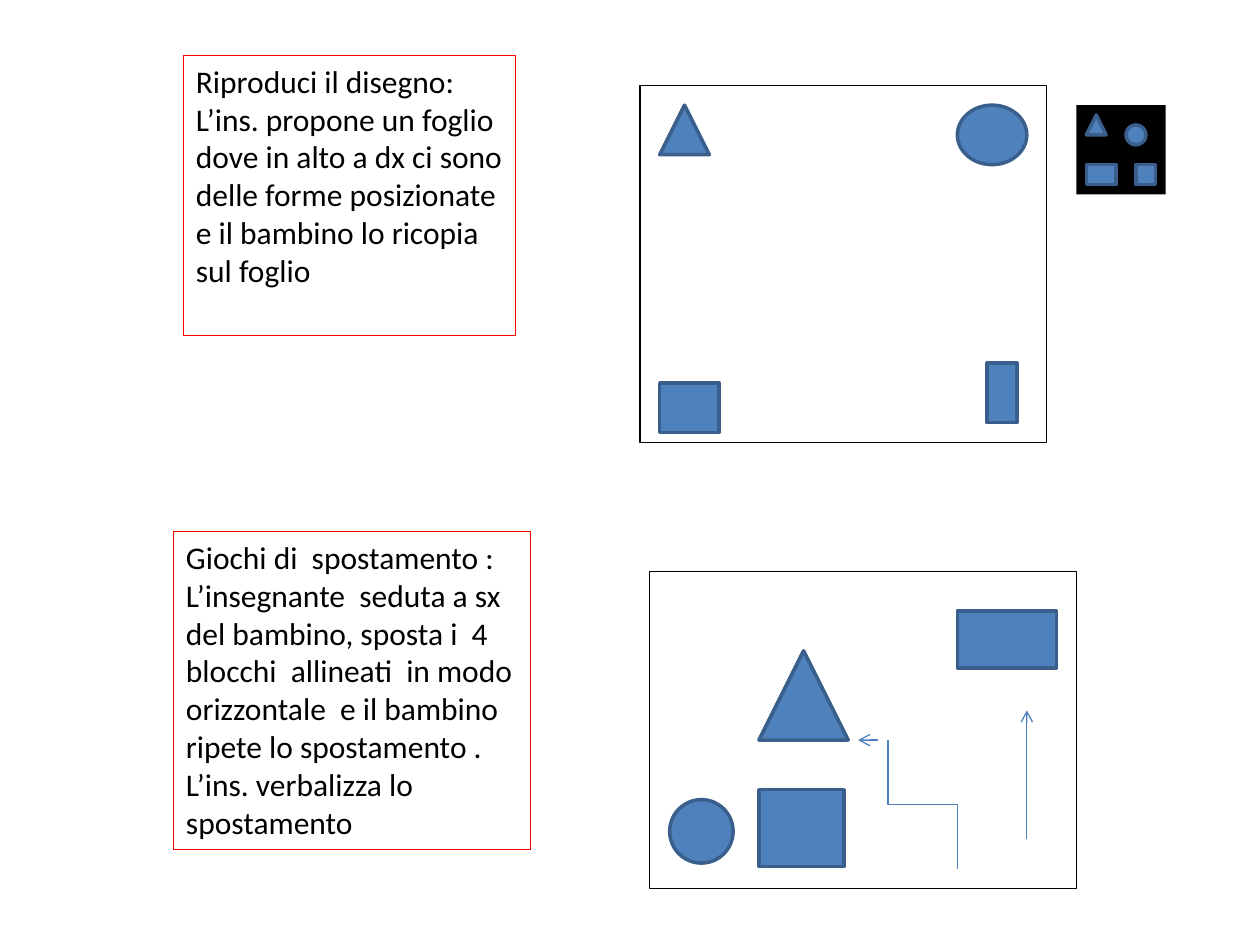
from lxml import etree
from pptx import Presentation
from pptx import util as u
from pptx.dml.color import RGBColor
from pptx.enum import shapes, text
from pptx.oxml import ns

BLUE = RGBColor(0x4F, 0x81, 0xBD)
EDGE = RGBColor(0x3A, 0x5F, 0x8C)
ARROW = RGBColor(0x4B, 0x7E, 0xBC)
RED = RGBColor(0xFF, 0x00, 0x00)
BLACK = RGBColor(0x00, 0x00, 0x00)

KIND = shapes.MSO_SHAPE
RECT, TRIANGLE, CIRCLE = KIND.RECTANGLE, KIND.ISOSCELES_TRIANGLE, KIND.FLOWCHART_CONNECTOR
STRAIGHT, ELBOW = shapes.MSO_CONNECTOR.STRAIGHT, shapes.MSO_CONNECTOR.ELBOW


class Sheet:
    font = {"name": "Calibri", "size": u.Pt(18)}
    frame = {
        "word_wrap": True,
        "auto_size": text.MSO_AUTO_SIZE.NONE,
        "vertical_anchor": text.MSO_ANCHOR.TOP,
    }

    def __init__(self, slide):
        self.slide = slide

    def figure(self, kind, box, fill=BLUE, line=EDGE, width=2):
        shape = self.slide.shapes.add_shape(kind, *map(u.Cm, box))
        shape.shadow.inherit = False
        if fill is None:
            shape.fill.background()
        else:
            shape.fill.solid()
            shape.fill.fore_color.rgb = fill
        if line is None:
            shape.line.fill.background()
        else:
            shape.line.color.rgb = line
            shape.line.width = u.Pt(width)
        return shape

    def outline(self, box, line=BLACK):
        return self.figure(RECT, box, None, line, 0.75)

    def note(self, box, paragraphs):
        frame = self.outline(box, RED).text_frame
        for name, value in self.frame.items():
            setattr(frame, name, value)
        frame.text = "\n".join(paragraphs)
        for paragraph in frame.paragraphs:
            paragraph.alignment = text.PP_ALIGN.LEFT
            for run in paragraph.runs:
                run.font.color.rgb = BLACK
                for name, value in self.font.items():
                    setattr(run.font, name, value)

    def path_line(self, start, end, kind=STRAIGHT, head=True):
        line = self.slide.shapes.add_connector(kind, *map(u.Cm, start + end))
        line.line.color.rgb = ARROW
        line.line.width = u.Pt(0.75)
        properties = line._element.spPr
        if head:
            tail = etree.SubElement(properties.find(ns.qn("a:ln")), ns.qn("a:tailEnd"))
            tail.set("type", "arrow")
        etree.SubElement(properties, ns.qn("a:effectLst"))
        return line


def main():
    deck = Presentation()
    deck.slide_width, deck.slide_height = u.Cm(25.4), u.Cm(19.05)
    sheet = Sheet(deck.slides.add_slide(deck.slide_layouts[6]))

    # Instructions
    sheet.note((3.5, 10.72, 7.2, 6.4), [
        "Giochi di  spostamento :",
        "L’insegnante  seduta a sx del bambino, sposta i  4 blocchi  allineati  in modo "
        "orizzontale  e il bambino ripete lo spostamento . L’ins. verbalizza lo spostamento",
    ])
    sheet.note((3.7, 1.12, 6.7, 5.64), [
        "Riproduci il disegno:",
        "L’ins. propone un foglio dove in alto a dx ci sono delle forme posizionate "
        "e il bambino lo ricopia sul foglio",
    ])

    # Drawing sheet and its small model
    sheet.outline((12.9, 1.72, 8.2, 7.2))
    sheet.figure(RECT, (21.7, 2.12, 1.8, 1.8), BLACK, None)
    drawing = [
        (TRIANGLE, (13.3, 2.12, 1, 1)),
        (CIRCLE, (19.3, 2.12, 1.4, 1.2)),
        (RECT, (13.3, 7.72, 1.2, 1)),
        (RECT, (19.9, 7.32, 0.6, 1.2)),
    ]
    model = [
        (CIRCLE, (22.7, 2.52, 0.4, 0.4)),
        (TRIANGLE, (21.9, 2.32, 0.4, 0.4)),
        (RECT, (22.9, 3.32, 0.4, 0.4)),
        (RECT, (21.9, 3.32, 0.6, 0.4)),
    ]
    for kind, box in drawing + model:
        sheet.figure(kind, box)

    # Blocks to move
    sheet.outline((13.1, 11.52, 8.6, 6.4))
    blocks = [
        (CIRCLE, (13.5, 16.12, 1.28, 1.28)),
        (RECT, (15.3, 15.92, 1.72, 1.55)),
        (TRIANGLE, (15.3, 13.12, 1.8, 1.8)),
        (RECT, (19.3, 12.32, 2, 1.15)),
    ]
    for kind, box in blocks:
        sheet.figure(kind, box)

    # Moves: the elbow is turned so that it starts and ends upright
    sheet.path_line((20.7, 16.92), (20.7, 14.32))
    elbow = sheet.path_line((19.9, 15.52), (17.3, 16.92), ELBOW, head=False)
    elbow._element.spPr.xfrm.set("rot", str(270 * 60000))
    sheet.path_line((17.7, 14.92), (17.3, 14.92))

    deck.save("out.pptx")


if __name__ == "__main__":
    main()
